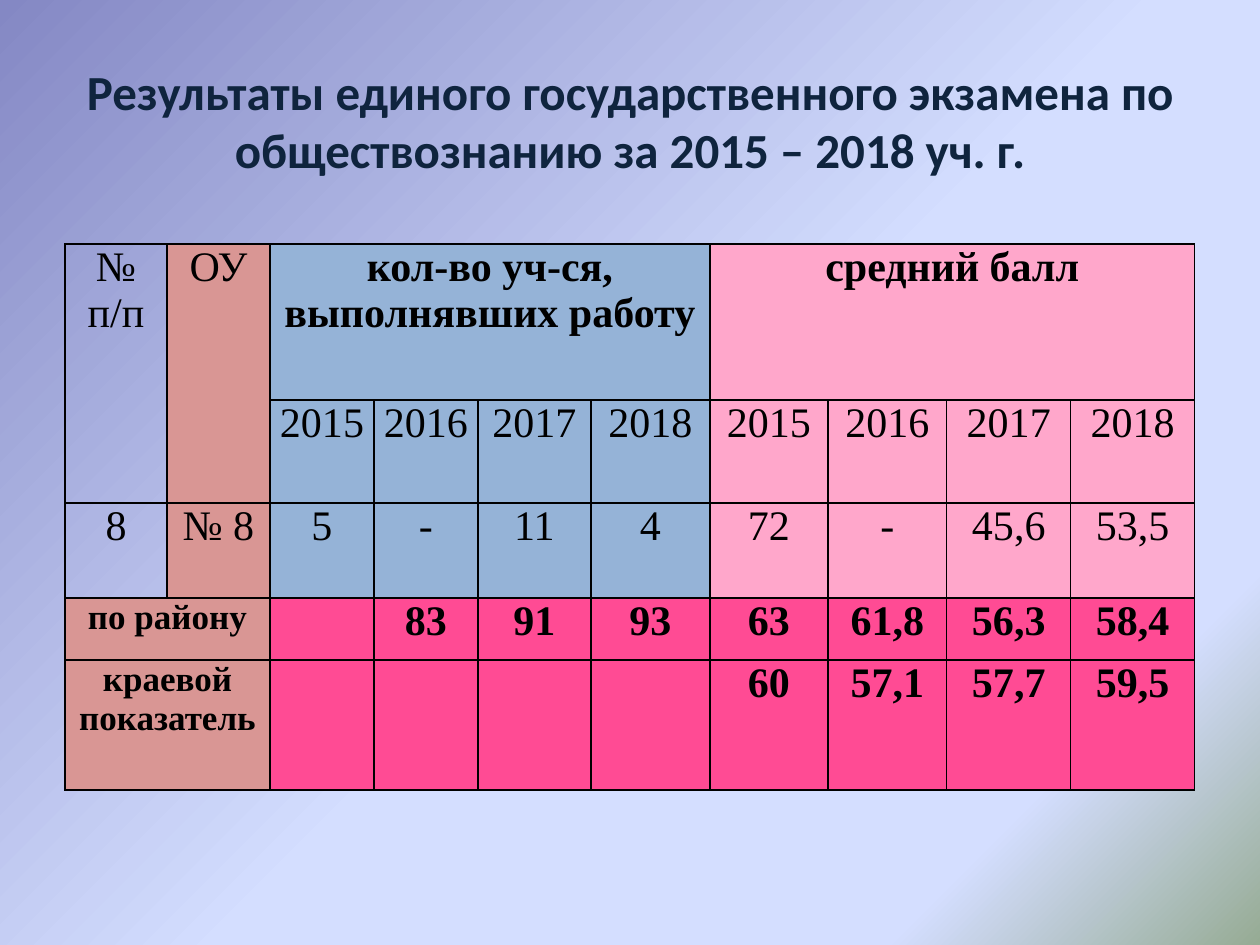
import dataclasses
import typing

import lxml.etree
import pptx
import pptx.dml.color
import pptx.enum.text
import pptx.oxml
import pptx.oxml.ns
import pptx.util

EMU_PER_PX = 914400 / 126
COLORS = {
    "title": "0F243E",
    "ink": "000000",
    "rose": "D99694",
    "blue": "95B3D7",
    "pink": "FFA7CB",
    "magenta": "FF4B94",
}
BACKGROUND_STOPS = ((0, "8488C4"), (53, "D4DEFF"), (83, "D4DEFF"), (100, "96AB94"))
COLUMN_WIDTHS = (102, 103, 104, 104, 113, 119, 118, 119, 124, 124)
ROW_HEIGHTS = (156, 103, 95, 62, 130)
COLUMN_FILLS = (None, "rose") + ("blue",) * 4 + ("pink",) * 4
SUMMARY_FILLS = ("rose",) * 2 + ("magenta",) * 8
YEARS = ("2015", "2016", "2017", "2018")


@dataclasses.dataclass(frozen=True)
class TableRow:
    texts: tuple[str, ...]
    fills: tuple[typing.Optional[str], ...] = COLUMN_FILLS
    bold_from: int = 10
    label_size: int = 24


@dataclasses.dataclass(frozen=True)
class Merge:
    row: int
    column: int
    last_row: int
    last_column: int


ROWS = (
    TableRow(("№ п/п", "ОУ", "кол-во уч-ся,\nвыполнявших работу", "", "", "",
              "средний балл", "", "", ""), bold_from=2),
    TableRow(("", "") + YEARS + YEARS),
    TableRow(("8", "№ 8", "5", "-", "11", "4", "72", "-", "45,6", "53,5")),
    TableRow(("по району", "", "", "83", "91", "93", "63", "61,8", "56,3", "58,4"),
             SUMMARY_FILLS, 0, 20),
    TableRow(("краевой показатель", "", "", "", "", "", "60", "57,1", "57,7", "59,5"),
             SUMMARY_FILLS, 0, 20),
)
MERGES = (
    Merge(0, 0, 1, 0),
    Merge(0, 1, 1, 1),
    Merge(0, 2, 0, 5),
    Merge(0, 6, 0, 9),
    Merge(3, 0, 3, 1),
    Merge(4, 0, 4, 1),
)


def px(length: int) -> pptx.util.Emu:
    return pptx.util.Emu(round(length * EMU_PER_PX))


def rgb(name: str) -> pptx.dml.color.RGBColor:
    return pptx.dml.color.RGBColor.from_string(COLORS[name])


def add_node(parent, tag: str, **attributes: str):
    return lxml.etree.SubElement(parent, pptx.oxml.ns.qn(tag), attributes)


def paint_background(page) -> None:
    fill = page.background.fill
    fill.gradient()
    fill.gradient_angle = 315
    stops = page.background._cSld.find(".//" + pptx.oxml.ns.qn("a:gsLst"))
    for stop in list(stops):
        stops.remove(stop)
    for percent, color in BACKGROUND_STOPS:
        stop = add_node(stops, "a:gs", pos=str(percent * 1000))
        add_node(stop, "a:srgbClr", val=color)


def format_text(frame, face: str, size: int, color: str, bold: bool) -> None:
    for para in frame.paragraphs:
        para.alignment = pptx.enum.text.PP_ALIGN.CENTER
        for span in para.runs:
            span.font.name = face
            span.font.size = pptx.util.Pt(size)
            span.font.bold = bold
            span.font.color.rgb = rgb(color)


def add_title(page, text: str) -> None:
    box = page.shapes.add_textbox(px(63), px(38), px(1134), px(164))
    frame = box.text_frame
    frame.word_wrap = True
    frame.vertical_anchor = pptx.enum.text.MSO_ANCHOR.MIDDLE
    frame.text = text
    format_text(frame, "Calibri", 28, "title", True)


def add_borders(cell) -> None:
    properties = cell._tc.get_or_add_tcPr()
    for side in ("a:lnL", "a:lnR", "a:lnT", "a:lnB"):
        line = add_node(properties, side, w="12700")
        add_node(add_node(line, "a:solidFill"), "a:srgbClr", val=COLORS["ink"])


def fill_cell(cell, row: TableRow, column: int) -> None:
    cell.margin_left = cell.margin_right = px(9)
    cell.margin_top = cell.margin_bottom = 0
    add_borders(cell)
    fill = row.fills[column]
    if fill is None:
        cell.fill.background()
    else:
        cell.fill.solid()
        cell.fill.fore_color.rgb = rgb(fill)
    if row.texts[column]:
        cell.text_frame.text = row.texts[column]
        size = row.label_size if column == 0 else 24
        format_text(cell.text_frame, "Times New Roman", size, "ink", column >= row.bold_from)


def add_results_table(page) -> None:
    table = page.shapes.add_table(
        len(ROW_HEIGHTS), len(COLUMN_WIDTHS), px(65), px(244),
        px(sum(COLUMN_WIDTHS)), px(sum(ROW_HEIGHTS))).table
    table.first_row = table.horz_banding = False
    for column, width in zip(table.columns, COLUMN_WIDTHS):
        column.width = px(width)
    for table_row, height in zip(table.rows, ROW_HEIGHTS):
        table_row.height = px(height)
    for row_index, row in enumerate(ROWS):
        for column_index in range(len(COLUMN_WIDTHS)):
            fill_cell(table.cell(row_index, column_index), row, column_index)
    for merge in MERGES:
        first = table.cell(merge.row, merge.column)
        first.merge(table.cell(merge.last_row, merge.last_column))


def main() -> None:
    deck = pptx.Presentation()
    deck.slide_width, deck.slide_height = px(1260), px(945)
    page = deck.slides.add_slide(deck.slide_layouts[6])
    paint_background(page)
    add_title(page, "Результаты единого государственного экзамена по "
                    "обществознанию за 2015 – 2018 уч. г.")
    add_results_table(page)
    deck.save("out.pptx")


if __name__ == "__main__":
    main()
